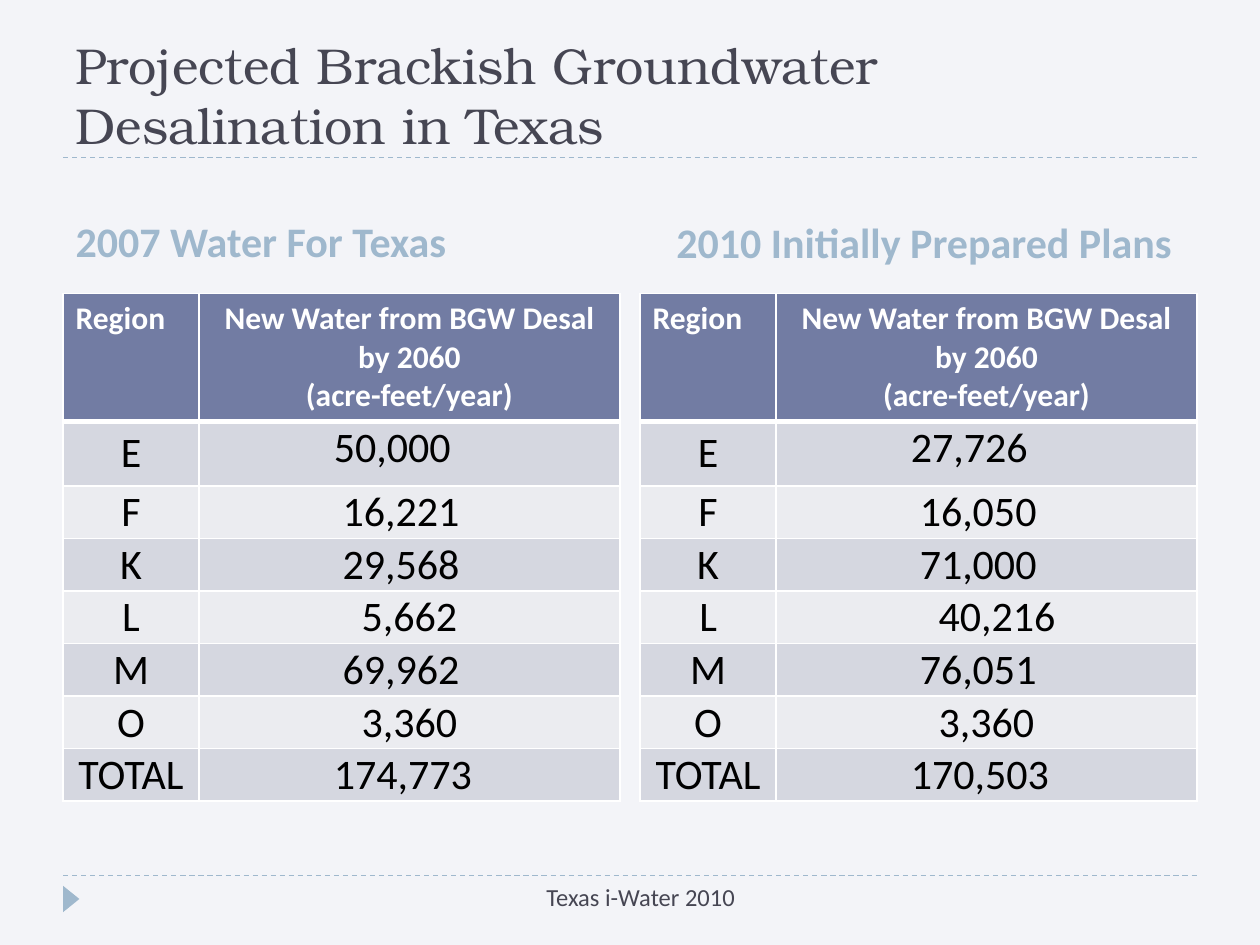
from dataclasses import dataclass
from lxml.etree import SubElement as Sub
from pptx import Presentation
from pptx.dml.color import RGBColor as RGB
from pptx.enum.dml import MSO_LINE as Dash
from pptx.enum.shapes import MSO_CONNECTOR as Conn, MSO_SHAPE as Shape
from pptx.enum.text import MSO_ANCHOR as Anchor, MSO_AUTO_SIZE as Auto, PP_ALIGN as Align
from pptx.oxml import parse_xml
from pptx.oxml.ns import nsdecls, qn
from pptx.util import Inches, Pt


@dataclass(frozen=True)
class Theme:
    """Colours, fonts and type sizes of the slide."""
    back: str = "F3F4F8"
    ink: str = "464653"
    sky: str = "9FB8CD"
    head: str = "727CA3"
    bands: tuple = ("D5D7E0", "EBECF0")
    white: str = "FFFFFF"
    black: str = "000000"
    serif: str = "TeX Gyre Bonum"
    sans: str = "Calibri"
    title: float = 28.8
    label: float = 24
    top: float = 18
    foot: float = 14


T = Theme()
REGIONS = ("E", "F", "K", "L", "M", "O", "TOTAL")
INDENTS = (1.07, 1.14, 1.14, 1.29, 1.14, 1.29, 1.07)
HEIGHTS = (1.01, 0.51) + (0.41,) * 6
HEADS = ("Region", "New Water from BGW Desal by 2060\n(acre-feet/year)")
PLANS = (
    ("2007 Water For Texas", (0.5, 1.41, 4.42, 0.75), Align.LEFT, 0.5,
     ("50,000", "16,221", "29,568", "5,662", "69,962", "3,360", "174,773")),
    ("2010 Initially Prepared Plans", (4.92, 1.42, 4.83, 0.75), Align.CENTER, 5.08,
     ("27,726", "16,050", "71,000", "40,216", "76,051", "3,360", "170,503")),
)


def assign(obj, vals):
    """Set each attribute named in a dict."""
    for key, val in vals.items():
        setattr(obj, key, val)


def write(frame, text, size, color, align=Align.LEFT, font=T.sans, bold=False, before=0):
    """Fill a text frame with evenly styled paragraphs."""
    frame.text = text
    for para in frame.paragraphs:
        assign(para, {"alignment": align, "space_before": Pt(before)})
        for run in para.runs:
            assign(run.font, {"name": font, "size": Pt(size), "bold": bold})
            run.font.color.rgb = RGB.from_string(color)


def place(shape, box):
    """Move a shape to a box given in inches."""
    assign(shape, dict(zip(("left", "top", "width", "height"), map(Inches, box))))


def add_rule(slide, y):
    """Draw a dashed rule across the slide."""
    rule = slide.shapes.add_connector(
        Conn.STRAIGHT, Inches(0.5), Inches(y), Inches(9.5), Inches(y))
    assign(rule.line, {"width": Pt(0.75), "dash_style": Dash.DASH})
    rule.line.color.rgb = RGB.from_string(T.sky)
    Sub(rule._element.spPr, qn("a:effectLst"))


def add_title(slide, box):
    """Set the title and the rule below it."""
    title = slide.shapes.title
    place(title, box)
    assign(title.text_frame, {"vertical_anchor": Anchor.MIDDLE, "auto_size": Auto.NONE})
    write(title.text_frame, "Projected Brackish Groundwater Desalination in Texas",
          T.title, T.ink, font=T.serif)
    add_rule(slide, box[1] + box[3])


def add_label(hold, text, box, align):
    """Set the heading above a table."""
    place(hold, box)
    assign(hold.text_frame, {"vertical_anchor": Anchor.BOTTOM, "auto_size": Auto.NONE})
    write(hold.text_frame, text, T.label, T.sky, align, bold=True, before=6)


def paint(cell, color, top=1, base=1):
    """Fill a cell and give it white borders."""
    cell.fill.solid()
    cell.fill.fore_color.rgb = RGB.from_string(color)
    props = cell._tc.get_or_add_tcPr()
    for spot, (side, width) in enumerate(zip("LRTB", (1, 1, top, base))):
        props.insert(spot, parse_xml(
            f'<a:ln{side} {nsdecls("a")} w="{Pt(width)}"><a:solidFill>'
            f'<a:srgbClr val="{T.white}"/></a:solidFill></a:ln{side}>'))


def pad(cell, left=0.01):
    """Give a cell tight margins."""
    assign(cell, {"margin_left": Inches(left), "margin_right": Inches(0.01),
                  "margin_top": Inches(0.01), "margin_bottom": 0})


def add_grid(slide, box, vals):
    """Build the table of regions and volumes."""
    grid = slide.shapes.add_table(len(HEIGHTS), 2, *map(Inches, box)).table
    grid.horz_banding = False
    for col, width in zip(grid.columns, (1.08, box[2] - 1.08)):
        col.width = Inches(width)
    for row, height in zip(grid.rows, HEIGHTS):
        row.height = Inches(height)
    for col, (text, align) in enumerate(zip(HEADS, (Align.LEFT, Align.CENTER))):
        cell = grid.cell(0, col)
        paint(cell, T.head, base=3)
        write(cell.text_frame, text, T.top, T.white, align, bold=True)
    for row, (name, val, left) in enumerate(zip(REGIONS, vals, INDENTS), 1):
        key, num = grid.cell(row, 0), grid.cell(row, 1)
        for cell in (key, num):
            paint(cell, T.bands[(row - 1) % 2], top=3 if row == 1 else 1)
        if row > 1:
            pad(key)
        pad(num, left)
        write(key.text_frame, name, T.label, T.black, Align.CENTER)
        write(num.text_frame, val, T.label, T.black)


def add_foot(slide, box):
    """Set the footer rule, marker and text."""
    add_rule(slide, box[1])
    mark = slide.shapes.add_shape(
        Shape.ISOSCELES_TRIANGLE, *map(Inches, (0.46, box[1] + 0.12, 0.21, 0.13)))
    mark.rotation = 90
    mark.shadow.inherit = False
    mark.fill.solid()
    mark.fill.fore_color.rgb = RGB.from_string(T.sky)
    mark.line.fill.background()
    note = slide.shapes.add_textbox(*map(Inches, box))
    note.text_frame.word_wrap = True
    write(note.text_frame, "Texas i-Water 2010", T.foot, T.ink, Align.CENTER)


def main():
    """Build and save the slide."""
    deck = Presentation()
    assign(deck, {"slide_width": Inches(10), "slide_height": Inches(7.5)})
    slide = deck.slides.add_slide(deck.slide_layouts[4])
    slide.background.fill.solid()
    slide.background.fill.fore_color.rgb = RGB.from_string(T.back)
    holds = {hold.placeholder_format.idx: hold for hold in slide.placeholders}
    for idx in (2, 4):
        item = holds[idx]._element
        item.getparent().remove(item)
    add_title(slide, (0.5, 0.25, 9, 1))
    for idx, (text, box, align, left, vals) in zip((1, 3), PLANS):
        add_label(holds[idx], text, box, align)
        add_grid(slide, (left, 2.33, 4.42, sum(HEIGHTS)), vals)
    add_foot(slide, (3.17, 6.95, 3.83, 0.4))
    deck.save("out.pptx")


if __name__ == "__main__":
    main()
